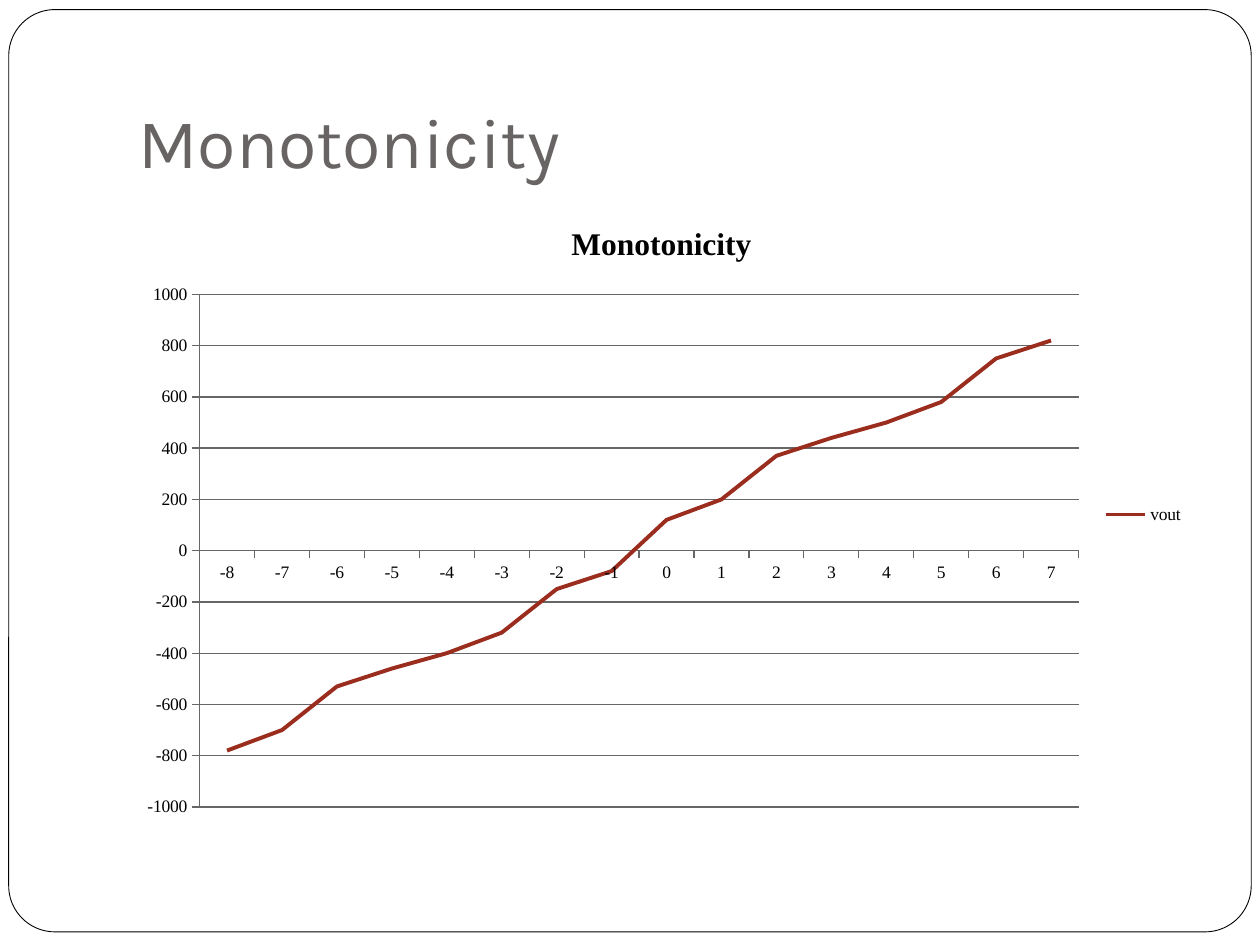
from pptx import Presentation
from pptx.chart.data import CategoryChartData
from pptx.dml.color import RGBColor
from pptx.enum.chart import XL_CHART_TYPE as Kind, XL_LEGEND_POSITION as Side, XL_TICK_MARK as Tick
from pptx.enum.shapes import MSO_SHAPE as Form
from pptx.enum.text import MSO_ANCHOR as Anchor, MSO_AUTO_SIZE as Fit, PP_ALIGN as Align
from pptx.util import Pt

HUES = {"page": "FFFFFF", "ink": "000000", "title": "696464",
        "grid": "666666", "line": "9B2D1F"}
VOLTS = [-780, -700, -530, -460, -400, -320, -150, -80,
         120, 200, 370, 440, 500, 580, 750, 820]


def hue(name):
    return RGBColor.from_string(HUES[name])


def style(font, face, size, tint, bold=False):
    font.name = face
    font.size = Pt(size)
    font.bold = bold
    font.color.rgb = hue(tint)


def stroke(line, tint, width):
    line.color.rgb = hue(tint)
    line.width = Pt(width)


def add_frame(slide, x, y, w, h):
    frame = slide.shapes.add_shape(Form.ROUNDED_RECTANGLE, Pt(x), Pt(y), Pt(w), Pt(h))
    frame.adjustments[0] = 0.05
    frame.shadow.inherit = False
    frame.fill.solid()
    frame.fill.fore_color.rgb = hue("page")
    stroke(frame.line, "ink", 0.5)
    slide.shapes.title._element.addprevious(frame._element)


def add_title(slide, x, y, w, h):
    title = slide.shapes.title
    title.left, title.top, title.width, title.height = Pt(x), Pt(y), Pt(w), Pt(h)
    text = title.text_frame
    text.auto_size = Fit.NONE
    text.word_wrap = True
    text.vertical_anchor = Anchor.BOTTOM
    text.margin_left = text.margin_right = text.margin_bottom = Pt(7.2)
    text.margin_top = Pt(3.6)
    para = text.paragraphs[0]
    para.alignment = Align.LEFT
    run = para.add_run()
    run.text = "Monotonicity"
    style(run.font, "Karla", 40, "title")


def add_graph(slide, x, y, w, h):
    data = CategoryChartData()
    data.categories = [str(code) for code in range(-8, 8)]
    data.add_series("vout", VOLTS)
    chart = slide.shapes.add_chart(Kind.LINE_STACKED, Pt(x), Pt(y), Pt(w), Pt(h), data).chart
    style(chart.font, "Times New Roman", 10, "ink")

    chart.has_title = True
    run = chart.chart_title.text_frame.paragraphs[0].add_run()
    run.text = "Monotonicity"
    style(run.font, "Times New Roman", 18, "ink", True)
    chart.chart_title.include_in_layout = False

    chart.has_legend = True
    chart.legend.position = Side.RIGHT
    chart.legend.include_in_layout = False

    for axis in (chart.category_axis, chart.value_axis):
        axis.major_tick_mark = Tick.OUTSIDE
        axis.minor_tick_mark = Tick.NONE
        stroke(axis.format.line, "grid", 0.75)
    scale = chart.value_axis
    scale.minimum_scale, scale.maximum_scale, scale.major_unit = -1000, 1000, 200
    scale.has_major_gridlines = True
    stroke(scale.major_gridlines.format.line, "grid", 0.75)

    plot = chart.plots[0]
    plot.vary_by_categories = False
    vout = plot.series[0]
    vout.smooth = False
    stroke(vout.format.line, "line", 2.25)


def main():
    deck = Presentation()
    deck.slide_width, deck.slide_height = Pt(720), Pt(540)
    slide = deck.slides.add_slide(deck.slide_layouts[5])
    slide.background.fill.solid()
    slide.background.fill.fore_color.rgb = hue("page")
    add_frame(slide, 5, 5.5, 710, 527)
    add_title(slide, 72, 21.6, 612, 90)
    add_graph(slide, 72, 114, 612, 360)
    deck.save("out.pptx")


if __name__ == "__main__":
    main()
